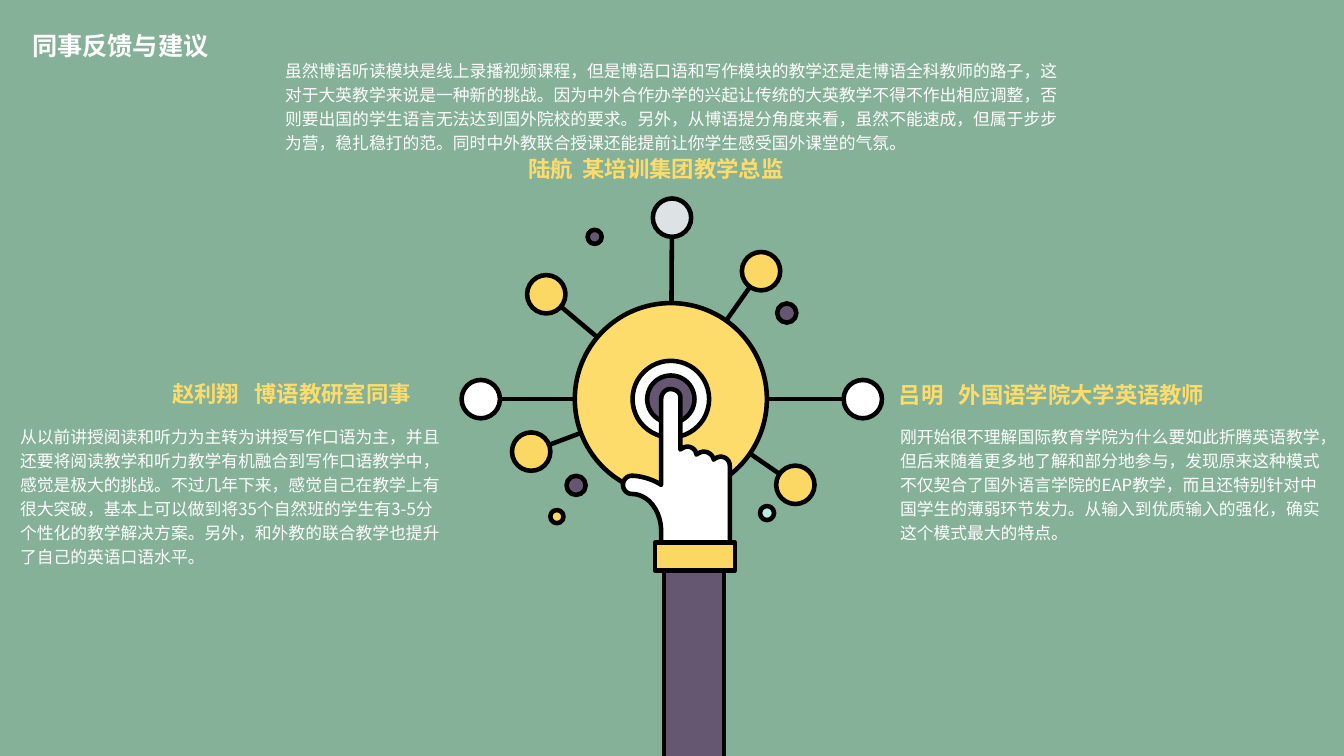
"""Build the colleague feedback slide with its touch-hub illustration."""
from math import cos, pi, sin

from lxml import etree
from pptx import Presentation
from pptx.dml.color import RGBColor
from pptx.enum.shapes import MSO_CONNECTOR, MSO_SHAPE
from pptx.enum.text import MSO_ANCHOR, MSO_AUTO_SIZE, PP_ALIGN
from pptx.oxml.ns import qn
from pptx.util import Pt

OVAL, RECT = MSO_SHAPE.OVAL, MSO_SHAPE.RECTANGLE
STRAIGHT = MSO_CONNECTOR.STRAIGHT
TOP, LEFT, NO_FIT = MSO_ANCHOR.TOP, PP_ALIGN.LEFT, MSO_AUTO_SIZE.NONE

GREEN = RGBColor(0x85, 0xB1, 0x98)
PURPLE = RGBColor(0x65, 0x57, 0x71)
YELLOW = RGBColor(0xFE, 0xDC, 0x6C)
AMBER = RGBColor(0xFB, 0xD7, 0x64)
MINT = RGBColor(0xBC, 0xEB, 0xDD)
GREY = RGBColor(0xDD, 0xE3, 0xE5)
WHITE = RGBColor(0xFF, 0xFF, 0xFF)
BLACK = RGBColor(0, 0, 0)

FONT = "Noto Sans CJK SC"
STROKE = 3.25
HEAD_SIZE, BODY_SIZE = 16, 12

TITLE = "同事反馈与建议"
TITLE_BOX = (15.8, 18, 144, 28.8)

# name, role, gap, heading box, comment, comment box
FEEDBACK = [
    ("陆航", "某培训集团教学总监", 7, (370.1, 107.3, 200.2, 26.6),
     "虽然博语听读模块是线上录播视频课程，但是博语口语和写作模块的教学还是走博语全科教师的路子，"
     "这对于大英教学来说是一种新的挑战。因为中外合作办学的兴起让传统的大英教学不得不作出相应调整，"
     "否则要出国的学生语言无法达到国外院校的要求。另外，从博语提分角度来看，虽然不能速成，"
     "但属于步步为营，稳扎稳打的范。同时中外教联合授课还能提前让你学生感受国外课堂的气氛。",
     (196.6, 36.7, 573.8, 77)),
    ("赵利翔", "博语教研室同事", 10.8, (115.9, 267.8, 190.8, 26.6),
     "从以前讲授阅读和听力为主转为讲授写作口语为主，并且还要将阅读教学和听力教学有机融合到写作口语教学中，"
     "感觉是极大的挑战。不过几年下来，感觉自己在教学上有很大突破，基本上可以做到将35个自然班的学生有3-5"
     "分个性化的教学解决方案。另外，和外教的联合教学也提升了自己的英语口语水平。",
     (7.2, 298.1, 317.5, 110.2)),
    ("吕明", "外国语学院大学英语教师", 10.8, (635, 268.6, 239, 26.6),
     "刚开始很不理解国际教育学院为什么要如此折腾英语教学，但后来随着更多地了解和部分地参与，"
     "发现原来这种模式不仅契合了国外语言学院的EAP教学，而且还特别针对中国学生的薄弱环节发力。"
     "从输入到优质输入的强化，确实这个模式最大的特点。",
     (635.8, 298.1, 317.5, 92.9)),
]

HUB = (479.2, 285.1)
RINGS = [(137.2, YELLOW), (54.7, WHITE), (33.8, PURPLE)]
NODE_SIZE = 27.4
NODES = [
    (343.4, 285.1, WHITE), (390.2, 210.2, AMBER), (543.6, 193.7, AMBER),
    (480, 155.5, GREY), (616.3, 285.1, WHITE), (568.1, 346.3, AMBER),
    (379.4, 322.6, AMBER),
]
DOTS = [
    (562, 223.6, 13.7, PURPLE), (411.5, 346.7, 13.7, PURPLE),
    (424.8, 169.2, 10.1, PURPLE), (547.9, 366.5, 10.1, MINT),
    (397.8, 369, 9.4, AMBER),
]
SLEEVE = (474.5, 397.4, 42.5, 157)
CUFF = (468, 387.4, 56.9, 20.2)

# end point of each stretch, with the corner its arc bends towards
HAND_START = (514.8, 326.2)
HAND = [
    ((509.8, 328.3), (512, 326.2)), ((502.6, 322.6), (509, 322.6)),
    ((497.5, 324.7), (500, 322.6)), ((491, 319), (497, 319)),
    ((486, 321.1), (488.5, 319)), ((486, 283.7), None),
    ((478.8, 277.9), (486, 277.9)), ((472.3, 285.1), (472.3, 277.9)),
    ((472.3, 346.3), None), ((451.4, 339.8), (463, 339.8)),
    ((445, 346.3), (445, 339.8)), ((451.4, 352.8), (445, 352.8)),
    ((472.3, 379.4), (472.3, 352.8)), ((472.3, 387.4), None),
    ((521.3, 387.4), None), ((521.3, 332.6), None),
    (HAND_START, (521.3, 326.2)),
]
ARC_STEPS = 10


def paint(sp, fill, width=STROKE):
    sp.shadow.inherit = False
    sp.fill.solid()
    sp.fill.fore_color.rgb = fill
    sp.line.color.rgb = BLACK
    sp.line.width = Pt(width)


def add_box(shapes, kind, box, fill, width=STROKE):
    paint(shapes.add_shape(kind, *map(Pt, box)), fill, width)


def add_circle(shapes, x, y, size, fill):
    add_box(shapes, OVAL, (x - size / 2, y - size / 2, size, size), fill)


def add_spoke(shapes, x, y):
    line = shapes.add_connector(STRAIGHT, *map(Pt, (*HUB, x, y)))
    line.line.color.rgb = BLACK
    line.line.width = Pt(STROKE)
    etree.SubElement(line._element.spPr, qn("a:effectLst"))


def arc(start, end, corner):
    angles = [pi / 2 * i / ARC_STEPS for i in range(1, ARC_STEPS + 1)]
    return [tuple(c + (a - c) * (1 - sin(t)) + (b - c) * (1 - cos(t))
                  for a, b, c in zip(start, end, corner)) for t in angles]


def add_hand(shapes):
    points, last = [], HAND_START
    for end, corner in HAND:
        points += arc(last, end, corner) if corner else [end]
        last = end
    outline = shapes.build_freeform(*map(Pt, HAND_START))
    outline.add_line_segments([tuple(map(Pt, pt)) for pt in points], close=True)
    paint(outline.convert_to_shape(), WHITE)


def write(sp, text, size, color, bold=False, spacing=1.0):
    tf = sp.text_frame
    tf.text = text
    tf.word_wrap = True
    tf.auto_size = NO_FIT
    tf.vertical_anchor = TOP
    p = tf.paragraphs[0]
    p.alignment = LEFT
    p.line_spacing = spacing
    p.font.size = Pt(size)
    p.font.bold = bold
    p.font.color.rgb = color
    p.font.name = FONT
    etree.SubElement(p.font._element, qn("a:ea"), typeface=FONT)
    return p


def add_heading(shapes, name, role, gap, box):
    sp = shapes.add_textbox(*map(Pt, box))
    p = write(sp, f"{name}\t{role}", HEAD_SIZE, YELLOW, bold=True)
    tabs = etree.Element(qn("a:tabLst"))
    stop = Pt(len(name) * HEAD_SIZE + gap)
    etree.SubElement(tabs, qn("a:tab"), pos=str(int(stop)), algn="l")
    p.font._element.addprevious(tabs)


def main():
    prs = Presentation()
    prs.slide_width, prs.slide_height = Pt(960), Pt(540)
    s = prs.slides.add_slide(prs.slide_layouts[5])
    s.background.fill.solid()
    s.background.fill.fore_color.rgb = GREEN
    shapes = s.shapes

    title = shapes.title
    title.left, title.top, title.width, title.height = map(Pt, TITLE_BOX)
    write(title, TITLE, 18, WHITE, bold=True)

    add_box(shapes, RECT, SLEEVE, PURPLE, 3)
    for x, y, _ in NODES:
        add_spoke(shapes, x, y)
    for size, fill in RINGS:
        add_circle(shapes, *HUB, size, fill)
    add_hand(shapes)
    for x, y, fill in NODES:
        add_circle(shapes, x, y, NODE_SIZE, fill)
    add_box(shapes, RECT, CUFF, AMBER)
    for dot in DOTS:
        add_circle(shapes, *dot)

    for name, role, gap, head_box, comment, body_box in FEEDBACK:
        add_heading(shapes, name, role, gap, head_box)
        body = shapes.add_textbox(*map(Pt, body_box))
        write(body, comment, BODY_SIZE, WHITE, spacing=1.2)
    prs.save("out.pptx")


if __name__ == "__main__":
    main()
